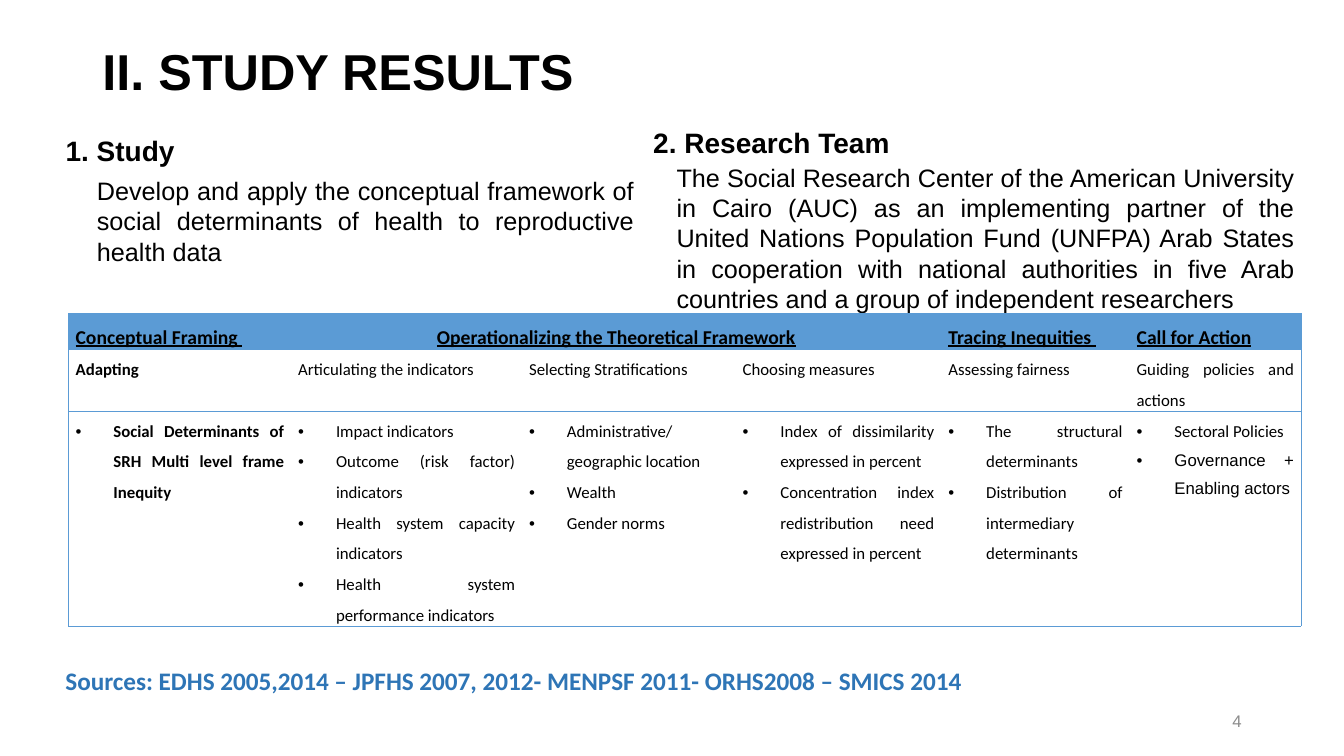
from lxml import etree
from pptx import Presentation
from pptx.dml.color import RGBColor
from pptx.enum.text import MSO_ANCHOR, MSO_AUTO_SIZE, PP_ALIGN
from pptx.oxml.ns import qn
from pptx.util import Pt

LEFT, CENTER, RIGHT = PP_ALIGN.LEFT, PP_ALIGN.CENTER, PP_ALIGN.RIGHT
JUST = PP_ALIGN.JUSTIFY
TOP, MIDDLE = MSO_ANCHOR.TOP, MSO_ANCHOR.MIDDLE
NO_FIT = MSO_AUTO_SIZE.NONE

BLACK, BLUE, NAVY, GRAY = "000000", "5B9BD5", "2E75B6", "8C8C8C"
INDENT = 27

WIDTHS = [159, 165, 152.5, 147, 134.5, 122.5]
HEIGHTS = [25.6, 42.9, 151.4]
HEADS = {
    0: "Conceptual Framing ",
    1: "Operationalizing the Theoretical Framework",
    4: "Tracing Inequities ",
    5: "Call for Action",
}
STEPS = ["Adapting", "Articulating the indicators", "Selecting Stratifications",
         "Choosing measures", "Assessing fairness", "Guiding policies and actions"]
ITEMS = [
    ["Social Determinants of SRH Multi level frame Inequity"],
    ["Impact indicators", "Outcome (risk factor) indicators",
     "Health system capacity indicators", "Health system performance indicators"],
    ["Administrative/ geographic location", "Wealth", "Gender norms"],
    ["Index of dissimilarity expressed in percent",
     "Concentration index redistribution need expressed in percent"],
    ["The structural determinants", "Distribution of intermediary determinants"],
    ["Sectoral Policies", "Governance + Enabling actors"],
]
TEAM = ("The Social Research Center of the American University in Cairo (AUC) as an "
        "implementing partner of the United Nations Population Fund (UNFPA) Arab States "
        "in cooperation with national authorities in five Arab countries and a group of "
        "independent researchers")


def color(code):
    return RGBColor.from_string(code)


def write(frame, *lines, size=18, font="Arial", ink=BLACK, bold=False,
          under=False, align=LEFT, space=1.0, bullet=False):
    """Fill a text frame with one paragraph per line."""
    for i, line in enumerate(lines):
        para = frame.add_paragraph() if i else frame.paragraphs[0]
        para.alignment, para.line_spacing = align, space
        para.space_before = para.space_after = Pt(0)
        props = para._p.get_or_add_pPr()
        props.set("marL", str(Pt(INDENT if bullet else 0)))
        props.set("indent", str(Pt(-INDENT if bullet else 0)))
        if bullet:
            etree.SubElement(props, qn("a:buFont"), typeface="Arial")
            etree.SubElement(props, qn("a:buChar"), char="•")
        else:
            etree.SubElement(props, qn("a:buNone"))
        run = para.add_run()
        run.text = line
        style = run.font
        style.size, style.name, style.bold = Pt(size), font, bold
        style.underline = under
        style.color.rgb = color(ink)


class Page:
    def __init__(self, deck, layout):
        self.slide = deck.slides.add_slide(deck.slide_layouts[layout])
        self.line = BLUE

    def place(self, shape, box, anchor, inset):
        """Set the bounds and the frame of a shape."""
        shape.left, shape.top, shape.width, shape.height = map(Pt, box)
        frame = shape.text_frame
        frame.word_wrap, frame.auto_size = True, NO_FIT
        frame.vertical_anchor = anchor
        frame.margin_left = frame.margin_right = Pt(inset)
        frame.margin_top = frame.margin_bottom = Pt(3.6)
        return frame

    def holder(self, idx, box, text, anchor=TOP, inset=7.2, **style):
        shape = self.slide.placeholders[idx]
        write(self.place(shape, box, anchor, inset), text, **style)

    def label(self, box, text, anchor=TOP, **style):
        shape = self.slide.shapes.add_textbox(*map(Pt, box))
        write(self.place(shape, box, anchor, 7.2), text, **style)

    def grid(self, left, top):
        shape = self.slide.shapes.add_table(
            len(HEIGHTS), len(WIDTHS), Pt(left), Pt(top),
            Pt(sum(WIDTHS)), Pt(sum(HEIGHTS)))
        table = shape.table
        table.horz_banding = False
        for col, width in zip(table.columns, WIDTHS):
            col.width = Pt(width)
        for row, height in zip(table.rows, HEIGHTS):
            row.height = Pt(height)
        table.cell(0, 1).merge(table.cell(0, 3))
        for r in range(len(HEIGHTS)):
            for c in range(len(WIDTHS)):
                self.frame(table.cell(r, c), c, r == 0)
        return table

    def frame(self, cell, c, head):
        """Draw row rules and the outer sides, then set fill and margins."""
        props = cell._tc.get_or_add_tcPr()
        sides = {"L": c == 0, "R": c == len(WIDTHS) - 1, "T": True, "B": True}
        for side, shown in sides.items():
            edge = etree.SubElement(props, qn("a:ln" + side), w=str(Pt(0.5)))
            if shown:
                fill = etree.SubElement(edge, qn("a:solidFill"))
                etree.SubElement(fill, qn("a:srgbClr"), val=self.line)
            else:
                etree.SubElement(edge, qn("a:noFill"))
        if head:
            cell.fill.solid()
            cell.fill.fore_color.rgb = color(self.line)
        else:
            cell.fill.background()
        cell.margin_left = cell.margin_right = Pt(5)
        cell.margin_top = cell.margin_bottom = Pt(0)


def main():
    deck = Presentation()
    deck.slide_width, deck.slide_height = Pt(960), Pt(540)
    page = Page(deck, 4)

    page.holder(0, (66, 28.8, 828, 49), "II. STUDY RESULTS", anchor=MIDDLE,
                size=36, bold=True, space=0.9)
    page.holder(1, (39.6, 91.5, 419, 31.5), "1. Study", size=20, bold=True)
    page.holder(2, (63.4, 121.7, 395.3, 72.7),
                "Develop and apply the conceptual framework of social determinants "
                "of health to reproductive health data", inset=5.8, align=JUST)
    page.holder(3, (459.4, 85.7, 471, 28), "2. Research Team", size=20, bold=True)
    page.holder(4, (477.4, 112.3, 453, 124), TEAM, inset=5.8, align=JUST)

    table = page.grid(49, 224)
    cells = {"font": "Calibri", "space": 1.5}
    for c, head in HEADS.items():
        write(table.cell(0, c).text_frame, head, size=14, bold=True, under=True,
              align=CENTER if c == 1 else JUST, **cells)
    for c, (step, items) in enumerate(zip(STEPS, ITEMS)):
        cells.update(size=12, bold=c == 0, align=JUST)
        write(table.cell(1, c).text_frame, step, **cells)
        write(table.cell(2, c).text_frame, *items, bullet=True, **cells)
    table.cell(2, 5).text_frame.paragraphs[1].runs[0].font.name = "Arial"

    page.label((39.6, 471.6, 908.6, 29),
               "Sources: EDHS 2005,2014 – JPFHS 2007, 2012- MENPSF 2011- "
               "ORHS2008 – SMICS 2014", font="Calibri", ink=NAVY, bold=True)
    page.label((678, 500.4, 216, 28.8), "4", anchor=MIDDLE, size=12, ink=GRAY,
               align=RIGHT)
    deck.save("out.pptx")


if __name__ == "__main__":
    main()
